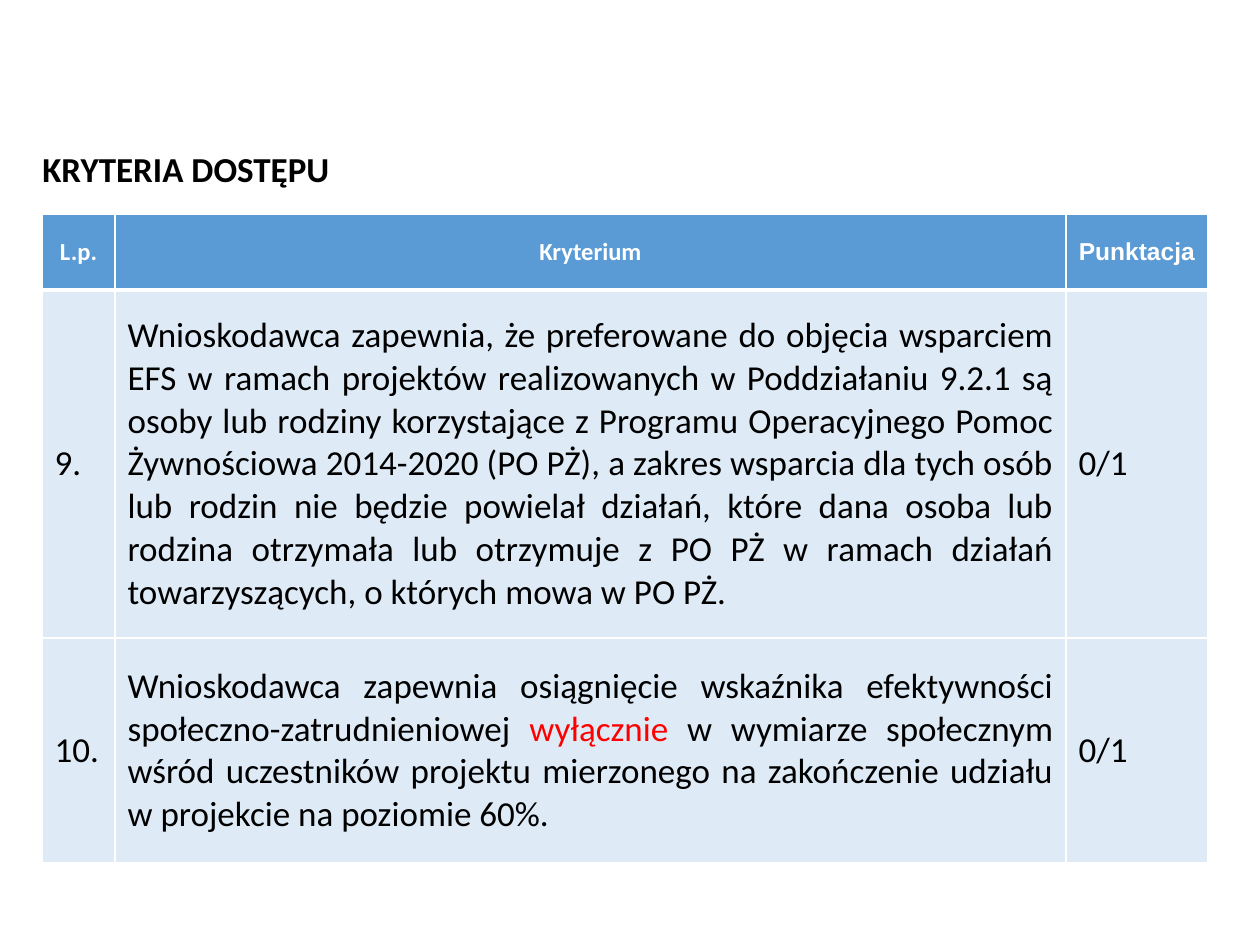
from dataclasses import dataclass

import pptx
import pptx.dml.color
import pptx.enum.text
import pptx.oxml
import pptx.oxml.ns
import pptx.util

PX = pptx.util.Inches(1) / 126
ALIGN = pptx.enum.text.PP_ALIGN
MIDDLE = pptx.enum.text.MSO_ANCHOR.MIDDLE


@dataclass(frozen=True)
class Theme:
    header_fill: str = "5B9BD5"
    body_fill: str = "DEEBF7"
    light: str = "FFFFFF"
    dark: str = "000000"
    accent: str = "FF0000"
    font: str = "Calibri"
    score_font: str = "Arial"
    header_size: int = 14
    body_size: int = 20
    rule: float = 1
    header_rule: float = 3


@dataclass(frozen=True)
class Style:
    fill: str
    color: str
    size: int
    bold: bool
    bottom_rule: float


@dataclass(frozen=True)
class Criterion:
    number: str
    wording: tuple[str, ...]  # every second part is highlighted
    score: str


THEME = Theme()
HEADER = Style(THEME.header_fill, THEME.light, THEME.header_size, True, THEME.header_rule)
BODY = Style(THEME.body_fill, THEME.dark, THEME.body_size, False, THEME.rule)

TABLE_LEFT, TABLE_TOP = 42, 214
COLUMN_WIDTHS = (73, 951, 142)
ROW_HEIGHTS = (76, 348, 225)

HEADINGS = (("L.p.", THEME.font), ("Kryterium", THEME.font), ("Punktacja", THEME.score_font))
CRITERIA = (
    Criterion("9.", (
        "Wnioskodawca zapewnia, że preferowane do objęcia wsparciem EFS w ramach projektów "
        "realizowanych w Poddziałaniu 9.2.1 są osoby lub rodziny korzystające z Programu "
        "Operacyjnego Pomoc Żywnościowa 2014-2020 (PO PŻ), a zakres wsparcia dla tych osób lub "
        "rodzin nie będzie powielał działań, które dana osoba lub rodzina otrzymała lub otrzymuje "
        "z PO PŻ w ramach działań towarzyszących, o których mowa w PO PŻ.",), "0/1"),
    Criterion("10.", (
        "Wnioskodawca zapewnia osiągnięcie wskaźnika efektywności społeczno-zatrudnieniowej ",
        "wyłącznie ",
        "w wymiarze społecznym wśród uczestników projektu mierzonego na zakończenie udziału "
        "w projekcie na poziomie 60%."), "0/1"),
)


def px(length: int) -> int:
    return round(length * PX)


def rgb(color: str) -> pptx.dml.color.RGBColor:
    return pptx.dml.color.RGBColor.from_string(color)


def set_font(font, name: str, size: int, bold: bool, color: str | None = None) -> None:
    font.name, font.size, font.bold = name, pptx.util.Pt(size), bold
    if color:
        font.color.rgb = rgb(color)


def set_borders(cell, bottom_rule: float, top_rule: float) -> None:
    """Put the cell's border lines ahead of its fill, as the schema asks."""
    widths = {"lnL": THEME.rule, "lnR": THEME.rule, "lnT": top_rule, "lnB": bottom_rule}
    properties = cell._tc.get_or_add_tcPr()
    for position, (side, width) in enumerate(widths.items()):
        properties.insert(position, pptx.oxml.parse_xml(
            f'<a:{side} {pptx.oxml.ns.nsdecls("a")} w="{pptx.util.Pt(width)}"><a:solidFill>'
            f'<a:srgbClr val="{THEME.light}"/></a:solidFill></a:{side}>'))


def fill_cell(cell, parts: tuple[str, ...], style: Style, align: ALIGN,
              font: str = THEME.font, top_rule: float = THEME.rule) -> None:
    cell.vertical_anchor = MIDDLE
    cell.fill.solid()
    cell.fill.fore_color.rgb = rgb(style.fill)
    set_borders(cell, style.bottom_rule, top_rule)
    paragraph = cell.text_frame.paragraphs[0]
    paragraph.alignment = align
    set_font(paragraph.font, font, style.size, style.bold)
    for index, part in enumerate(parts):
        run = paragraph.add_run()
        run.text = part
        set_font(run.font, font, style.size, style.bold,
                 THEME.accent if index % 2 else style.color)


def add_title(slide) -> None:
    title = slide.shapes.add_textbox(px(30), px(141), px(466), px(55)).text_frame
    title.word_wrap = True
    title.auto_size = pptx.enum.text.MSO_AUTO_SIZE.SHAPE_TO_FIT_TEXT
    title.vertical_anchor = MIDDLE
    title.text = "KRYTERIA DOSTĘPU"
    set_font(title.paragraphs[0].font, THEME.font, THEME.body_size, True, THEME.dark)


def add_criteria_table(slide) -> None:
    table = slide.shapes.add_table(
        len(ROW_HEIGHTS), len(COLUMN_WIDTHS), px(TABLE_LEFT), px(TABLE_TOP),
        px(sum(COLUMN_WIDTHS)), px(sum(ROW_HEIGHTS))).table
    for column, width in zip(table.columns, COLUMN_WIDTHS):
        column.width = px(width)
    for row, height in zip(table.rows, ROW_HEIGHTS):
        row.height = px(height)
    for index, (heading, font) in enumerate(HEADINGS):
        fill_cell(table.cell(0, index), (heading,), HEADER, ALIGN.CENTER, font)
    for row, criterion in enumerate(CRITERIA, start=1):
        top_rule = THEME.header_rule if row == 1 else THEME.rule
        contents = (((criterion.number,), ALIGN.LEFT), (criterion.wording, ALIGN.JUSTIFY),
                    ((criterion.score,), ALIGN.LEFT))
        for index, (parts, align) in enumerate(contents):
            fill_cell(table.cell(row, index), parts, BODY, align, top_rule=top_rule)


def main() -> None:
    presentation = pptx.Presentation()
    presentation.slide_width, presentation.slide_height = px(1260), px(945)
    slide = presentation.slides.add_slide(presentation.slide_layouts[6])
    add_criteria_table(slide)
    add_title(slide)
    presentation.save("out.pptx")


if __name__ == "__main__":
    main()
